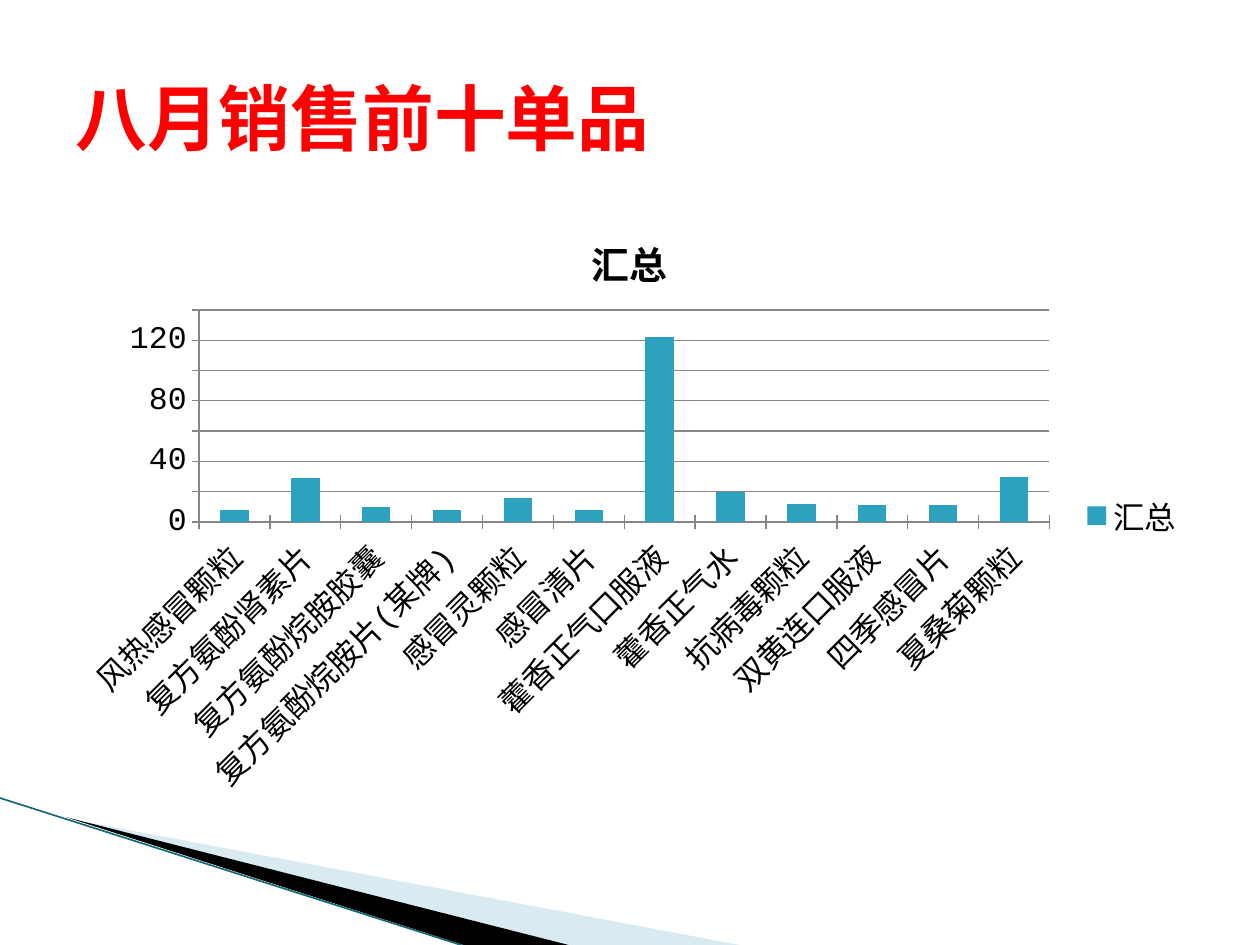
from typing import NamedTuple, Optional

from lxml import etree
from pptx import Presentation
from pptx.chart.data import CategoryChartData
from pptx.dml.color import RGBColor
from pptx.enum.chart import XL_CHART_TYPE, XL_LEGEND_POSITION, XL_TICK_MARK
from pptx.enum.shapes import MSO_CONNECTOR
from pptx.enum.text import MSO_ANCHOR
from pptx.oxml.ns import qn
from pptx.util import Pt

COLUMN = XL_CHART_TYPE.COLUMN_CLUSTERED
RIGHT = XL_LEGEND_POSITION.RIGHT
CROSS = XL_TICK_MARK.CROSS
STRAIGHT = MSO_CONNECTOR.STRAIGHT
MIDDLE = MSO_ANCHOR.MIDDLE

BLACK = RGBColor(0x00, 0x00, 0x00)
RED = RGBColor(0xFF, 0x00, 0x00)
TEAL = RGBColor(0x2D, 0xA2, 0xBF)
DARK_TEAL = RGBColor(0x16, 0x69, 0x7A)
PALE_BLUE = RGBColor(0xA0, 0xCB, 0xDC)
GRAY = RGBColor(0x86, 0x86, 0x86)

FONT = "Courier New"
TITLE_FONT = {"name": FONT, "size": Pt(41), "bold": True}
CHART_FONT = {"name": FONT, "size": Pt(18), "bold": False}
HEADING_FONT = {"name": FONT, "size": Pt(21.6), "bold": True}
PLOT_LAYOUT = {"x": 0.12, "y": 0.17, "w": 0.75, "h": 0.34}
LABEL_ROTATION = -45
SERIES = "汇总"


class Wedge(NamedTuple):
    points: list[tuple[float, float]]
    color: RGBColor
    opacity: Optional[int] = None


class Product(NamedTuple):
    name: str
    sales: int


WEDGES = [
    Wedge([(39.6, 468.4), (428.4, 540.7), (328.3, 540.7)], PALE_BLUE, 40),
    Wedge([(38.2, 467.3), (329, 540.7), (267.8, 541.4)], BLACK),
]

PRODUCTS = [
    Product("风热感冒颗粒", 8),
    Product("复方氨酚肾素片", 29),
    Product("复方氨酚烷胺胶囊", 10),
    Product("复方氨酚烷胺片(某牌)", 8),
    Product("感冒灵颗粒", 16),
    Product("感冒清片", 8),
    Product("藿香正气口服液", 122),
    Product("藿香正气水", 20),
    Product("抗病毒颗粒", 12),
    Product("双黄连口服液", 11),
    Product("四季感冒片", 11),
    Product("夏桑菊颗粒", 30),
]


def set_font(font, formats: dict, color: RGBColor) -> None:
    for key, value in formats.items():
        setattr(font, key, value)
    font.color.rgb = color


def draw_wedge(s, wedge: Wedge) -> None:
    x, y = wedge.points[0]
    builder = s.shapes.build_freeform(x, y, scale=float(Pt(1)))
    builder.add_line_segments(wedge.points[1:], close=True)
    sp = builder.convert_to_shape()
    sp.shadow.inherit = False
    sp.fill.solid()
    sp.fill.fore_color.rgb = wedge.color
    sp.line.fill.background()
    if wedge.opacity is not None:
        color = sp.fill._xPr.find(".//" + qn("a:srgbClr"))
        etree.SubElement(color, qn("a:alpha"), val=str(wedge.opacity * 1000))


def draw_edge(s) -> None:
    line = s.shapes.add_connector(STRAIGHT, Pt(-0.7), Pt(455.8), Pt(267.8), Pt(541.4))
    line.line.color.rgb = DARK_TEAL
    line.line.width = Pt(0.95)
    etree.SubElement(line._element.spPr, qn("a:effectLst"))


def draw_title(s, text: str) -> None:
    tf = s.shapes.add_textbox(Pt(36), Pt(21.6), Pt(648), Pt(90)).text_frame
    tf.word_wrap = True
    tf.vertical_anchor = MIDDLE
    r = tf.paragraphs[0].add_run()
    r.text = text
    set_font(r.font, TITLE_FONT, RED)


def place_plot(chart) -> None:
    area = chart._chartSpace.chart.plotArea
    for old in area.findall(qn("c:layout")):
        area.remove(old)
    layout = etree.Element(qn("c:layout"))
    area.insert(0, layout)
    manual = etree.SubElement(layout, qn("c:manualLayout"))
    values = {"layoutTarget": "inner", "xMode": "edge", "yMode": "edge", **PLOT_LAYOUT}
    for tag, value in values.items():
        etree.SubElement(manual, qn(f"c:{tag}"), val=str(value))


def draw_chart(s, products: list[Product]) -> None:
    data = CategoryChartData()
    data.categories = [product.name for product in products]
    data.add_series(SERIES, [product.sales for product in products])
    frame = s.shapes.add_chart(COLUMN, Pt(36), Pt(116.6), Pt(648), Pt(356.4), data)
    chart = frame.chart
    set_font(chart.font, CHART_FONT, BLACK)

    chart.has_title = True
    p = chart.chart_title.text_frame.paragraphs[0]
    r = p.add_run()
    r.text = SERIES
    set_font(r.font, HEADING_FONT, BLACK)

    chart.has_legend = True
    chart.legend.position = RIGHT
    chart.legend.include_in_layout = False

    plot = chart.plots[0]
    plot.vary_by_categories = False
    plot.gap_width = 150
    fill = plot.series[0].format.fill
    fill.solid()
    fill.fore_color.rgb = TEAL

    category_axis, value_axis = chart.category_axis, chart.value_axis
    for axis in (category_axis, value_axis):
        axis.major_tick_mark = CROSS
        axis.format.line.color.rgb = GRAY
        set_font(axis.tick_labels.font, CHART_FONT, BLACK)
    body = category_axis._element.find(qn("c:txPr")).find(qn("a:bodyPr"))
    body.set("rot", str(LABEL_ROTATION * 60000))
    value_axis.minimum_scale = 0
    value_axis.maximum_scale = 140
    value_axis.major_unit = 20
    value_axis.has_major_gridlines = True
    value_axis.major_gridlines.format.line.color.rgb = GRAY
    place_plot(chart)


def main() -> None:
    prs = Presentation()
    prs.slide_width, prs.slide_height = Pt(720), Pt(540)
    s = prs.slides.add_slide(prs.slide_layouts[6])
    for wedge in WEDGES:
        draw_wedge(s, wedge)
    draw_edge(s)
    draw_chart(s, PRODUCTS)
    draw_title(s, "八月销售前十单品")
    prs.save("out.pptx")


if __name__ == "__main__":
    main()
